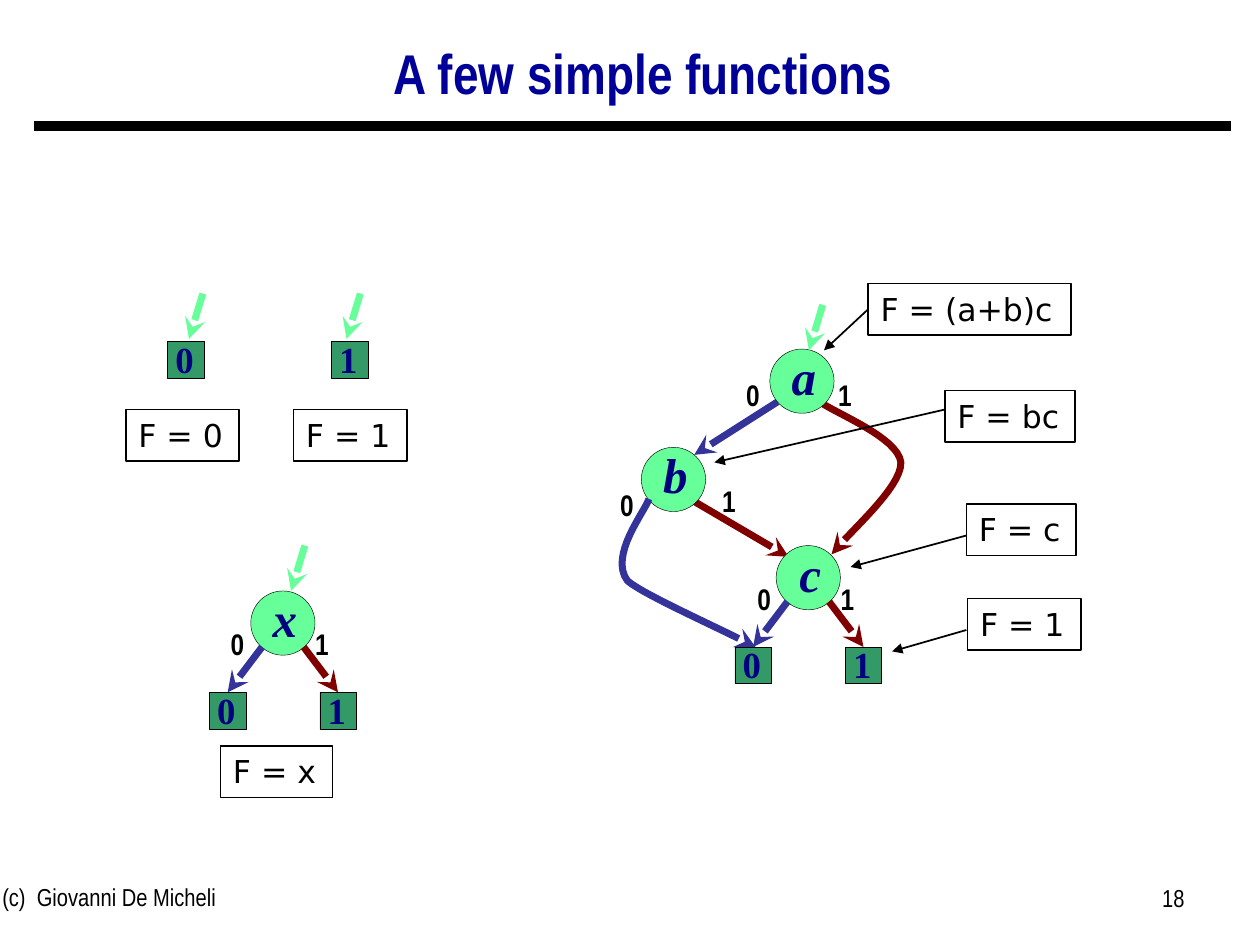
from typing import NamedTuple

from lxml.etree import SubElement
from pptx import Presentation
from pptx.dml.color import RGBColor
from pptx.enum.shapes import MSO_CONNECTOR, MSO_SHAPE
from pptx.enum.text import MSO_ANCHOR, MSO_AUTO_SIZE, PP_ALIGN
from pptx.oxml.ns import qn
from pptx.util import Inches, Pt

COLORS = {
    "ink": "000000", "title": "000099", "symbol": "000080", "node": "66FF99",
    "leaf": "339966", "low": "333399", "high": "800000",
}
# The slide is a grid of 100 columns by 75 rows
COLUMNS, ROWS = 100, 75
NODE_SIZE, LEAF_SIZE = 5.1, 2.9
BOX_HEIGHT = 4.1
LABEL_WIDTH, LABEL_HEIGHT = 1.1, 2.8
EDGE_WEIGHT = 4


class Point(NamedTuple):
    col: float
    row: float


class Node(NamedTuple):
    symbol: str
    corner: Point


class FunctionBox(NamedTuple):
    formula: str
    corner: Point
    width: float


class EdgeLabel(NamedTuple):
    value: str
    corner: Point


prs = Presentation()
prs.slide_width, prs.slide_height = Inches(10), Inches(7.5)
slide = prs.slides.add_slide(prs.slide_layouts[5])
shapes = slide.shapes


def x(col: float) -> int:
    return round(prs.slide_width * col / COLUMNS)


def y(row: float) -> int:
    return round(prs.slide_height * row / ROWS)


def rgb(name: str) -> RGBColor:
    return RGBColor.from_string(COLORS[name])


def write(shape, text: str, font: str, size: float, color: str = "ink", bold: bool = False,
          italic: bool = False, align=PP_ALIGN.LEFT, anchor=MSO_ANCHOR.TOP,
          wrap: bool = False, insets=(0.1, 0.05, 0.1, 0.05)) -> None:
    frame = shape.text_frame
    frame.text = text
    frame.word_wrap = wrap
    frame.auto_size = MSO_AUTO_SIZE.NONE
    frame.vertical_anchor = anchor
    (frame.margin_left, frame.margin_top,
     frame.margin_right, frame.margin_bottom) = map(Inches, insets)
    paragraph = frame.paragraphs[0]
    paragraph.alignment = align
    paragraph.font.name, paragraph.font.size = font, Pt(size)
    paragraph.font.bold, paragraph.font.italic = bold, italic
    paragraph.font.color.rgb = rgb(color)


def text_box(corner: Point, width: float, height: float, text: str, **style) -> None:
    box = shapes.add_textbox(x(corner.col), y(corner.row), x(width), y(height))
    write(box, text, "Arial Narrow", **style)


def outline(shape, color: str, weight: float, head: str = "") -> None:
    shape.line.color.rgb = rgb(color)
    shape.line.width = Pt(weight)
    if head:
        SubElement(shape.element.spPr.find(qn("a:ln")), qn("a:tailEnd"), type=head)


def symbol_shape(kind, node: Node, size: float, fill: str, font_size: float,
                 italic: bool, insets):
    shape = shapes.add_shape(kind, x(node.corner.col), y(node.corner.row), x(size), y(size))
    shape.shadow.inherit = False
    shape.fill.solid()
    shape.fill.fore_color.rgb = rgb(fill)
    outline(shape, "ink", 0.25)
    write(shape, node.symbol, "Times New Roman", font_size, "symbol", True, italic,
          PP_ALIGN.CENTER, MSO_ANCHOR.MIDDLE, insets=insets)
    return shape


def draw_node(node: Node) -> None:
    symbol_shape(MSO_SHAPE.OVAL, node, NODE_SIZE, "node", 28, True, (0.03, 0, 0, 0.08))


def draw_leaf(symbol: str, corner: Point):
    return symbol_shape(MSO_SHAPE.RECTANGLE, Node(symbol, corner), LEAF_SIZE, "leaf",
                        21, False, (0, 0, 0.02, 0.02))


def draw_line(start: Point, end: Point, color: str, weight: float, head: str = ""):
    line = shapes.add_connector(MSO_CONNECTOR.STRAIGHT, x(start.col), y(start.row),
                                x(end.col), y(end.row))
    outline(line, color, weight, head)
    SubElement(line.element.spPr, qn("a:effectLst"))
    return line


def draw_entry(tip: Point) -> None:
    draw_line(Point(tip.col + 1.1, tip.row - 3.6), tip, "node", EDGE_WEIGHT, "stealth")


def draw_curve(knots: list[Point], color: str, steps: int = 16) -> None:
    """Trace chained cubic Bezier curves: start, then two controls and an end each."""
    builder = shapes.build_freeform(x(knots[0].col), y(knots[0].row))
    for first in range(0, len(knots) - 1, 3):
        span = knots[first:first + 4]
        points = []
        for step in range(1, steps + 1):
            t = step / steps
            weights = ((1 - t) ** 3, 3 * t * (1 - t) ** 2, 3 * t * t * (1 - t), t ** 3)
            points.append((x(sum(w * p.col for w, p in zip(weights, span))),
                           y(sum(w * p.row for w, p in zip(weights, span)))))
        builder.add_line_segments(points, close=False)
    curve = builder.convert_to_shape()
    curve.shadow.inherit = False
    curve.fill.background()
    outline(curve, color, EDGE_WEIGHT, "stealth")


def draw_leaf_pair(node: Node) -> None:
    """Leaves 0 and 1 below a node, each joined to it by an edge."""
    center = node.corner.col + NODE_SIZE / 2
    for symbol, side, color in (("0", -1, "low"), ("1", 1, "high")):
        corner = Point(center + side * 4.38 - LEAF_SIZE / 2, node.corner.row + 8.05)
        leaf = draw_leaf(symbol, corner)
        start = Point(center + side * 1.65, node.corner.row + 4.45)
        edge = draw_line(start, corner, color, EDGE_WEIGHT, "stealth")
        edge.end_connect(leaf, 0)


def draw_function_box(box: FunctionBox):
    shape = shapes.add_shape(MSO_SHAPE.RECTANGLE, x(box.corner.col), y(box.corner.row),
                             x(box.width), y(BOX_HEIGHT))
    shape.shadow.inherit = False
    shape.fill.background()
    outline(shape, "ink", 1)
    write(shape, box.formula, "DejaVu Sans", 18)
    return shape


# Title, rule and footer
title = shapes.title
title.left, title.top, title.width, title.height = x(6.3), y(-0.6), x(89.5), y(13.3)
write(title, "A few simple functions", "Arial Narrow", 32, "title", True,
      align=PP_ALIGN.CENTER, anchor=MSO_ANCHOR.MIDDLE, wrap=True)
title.text_frame.paragraphs[0].line_spacing = 0.9
draw_line(Point(2.7, 10), Point(97.7, 10), "ink", 6)
text_box(Point(-0.8, 69.5), 31.7, 5.2, "(c)  Giovanni De Micheli", size=14, wrap=True)
text_box(Point(71.7, 69.6), 23.3, 5.2, "18", size=14, wrap=True, align=PP_ALIGN.RIGHT)

# Constant functions
for symbol, leaf_col, entry_col in (("0", 13.3, 15), ("1", 26.3, 27.5)):
    draw_leaf(symbol, Point(leaf_col, 27.1))
    draw_entry(Point(entry_col, 26.9))

# Single-variable function
node_x = Node("x", Point(19.9, 46.9))
draw_node(node_x)
draw_leaf_pair(node_x)
draw_entry(Point(23.1, 46.9))

# Decision diagram of (a+b)c
node_a = Node("a", Point(61.1, 27.7))
node_b = Node("b", Point(50.9, 35.5))
node_c = Node("c", Point(61.6, 43.3))
draw_line(Point(61.7, 31.9), Point(55.1, 36.1), "low", EDGE_WEIGHT, "stealth")
draw_curve([Point(65.1, 31.9), Point(66.1, 32.7), Point(71.3, 34.7), Point(71.5, 36.7),
            Point(71.6, 38.7), Point(67.2, 42.4), Point(66, 44)], "high")
draw_node(node_a)
draw_line(Point(55.1, 39.8), Point(62.6, 44.2), "high", EDGE_WEIGHT, "stealth")
draw_entry(Point(64.2, 27.8))
draw_node(node_b)
draw_curve([Point(51.5, 39.6), Point(51.2, 40.6), Point(48.3, 44.1), Point(49.8, 46.1),
            Point(51.2, 47.3), Point(57.9, 50.2), Point(60, 51.4)], "low")
draw_node(node_c)
draw_leaf_pair(node_c)

# Branch values beside the nodes
EDGE_LABELS = [
    EdgeLabel("0", Point(18.3, 49.7)), EdgeLabel("1", Point(25, 49.7)),
    EdgeLabel("0", Point(59.2, 29.9)), EdgeLabel("1", Point(66.5, 29.9)),
    EdgeLabel("0", Point(49.2, 38.6)), EdgeLabel("1", Point(57.3, 38.3)),
    EdgeLabel("0", Point(60.1, 46.1)), EdgeLabel("1", Point(66.7, 46.1)),
]
for label in EDGE_LABELS:
    text_box(label.corner, LABEL_WIDTH, LABEL_HEIGHT, label.value, size=17, bold=True,
             align=PP_ALIGN.CENTER, insets=(0, 0, 0, 0))

# Function boxes
for box in (FunctionBox("F = 0", Point(10, 32.5), 9),
            FunctionBox("F = 1", Point(23.3, 32.5), 9),
            FunctionBox("F = x", Point(17.5, 59.2), 8.9),
            FunctionBox("F = bc", Point(75, 31), 10.3),
            FunctionBox("F = c", Point(76.7, 40), 8.7),
            FunctionBox("F = 1", Point(76.8, 47.5), 9)):
    draw_function_box(box)
root_box = draw_function_box(FunctionBox("F = (a+b)c", Point(68.9, 22.5), 16.1))

# Pointers from the boxes to the diagram
for start, end in ((Point(76.7, 50), Point(70.8, 51.7)),
                   (Point(76.7, 42.5), Point(67.5, 45)),
                   (Point(75, 32.5), Point(56.7, 36.7))):
    draw_line(start, end, "ink", 1, "triangle")
root_pointer = draw_line(Point(68.8, 24.8), Point(65.4, 27.8), "ink", 1, "triangle")
root_pointer.begin_connect(root_box, 1)

prs.save("out.pptx")
